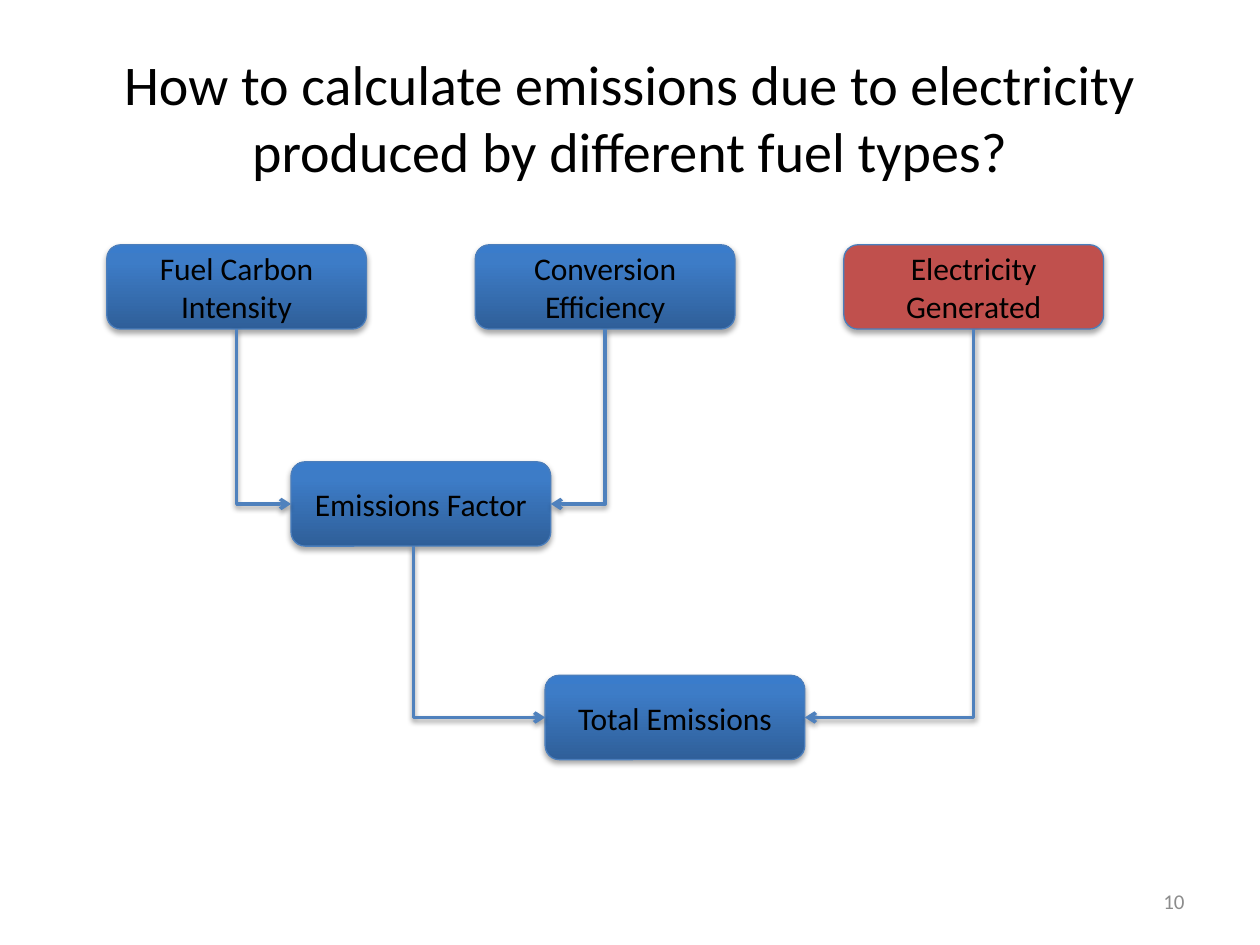
from copy import deepcopy
from lxml import etree
from pptx import Presentation
from pptx import util as u
from pptx.dml.color import RGBColor
from pptx.enum import shapes, text
from pptx.oxml import ns

Pt = u.Pt
BLACK = RGBColor(0, 0, 0)
GREY = RGBColor(0x8C, 0x8C, 0x8C)
RED = RGBColor(0xC0, 0x50, 0x4D)
EDGE = RGBColor(0x4B, 0x7E, 0xBC)
ARROW = RGBColor(0x4F, 0x81, 0xBD)
BLUES = ((0, RGBColor(0x2F, 0x5F, 0x99)),
         (80, RGBColor(0x3D, 0x7C, 0xC7)),
         (100, RGBColor(0x3A, 0x7C, 0xCB)))
WIDE, HIGH = 148.4, 48.2


def add(node, tag, **attrs):
    return etree.SubElement(node, ns.qn(tag), attrs)


def shade(list_, dist, alpha):
    drop = add(list_, "a:outerShdw", blurRad=str(Pt(3.15)), dist=str(Pt(dist)),
               dir="5400000", rotWithShape="0")
    add(add(drop, "a:srgbClr", val=str(BLACK)), "a:alpha", val=str(alpha * 1000))


def write(shape, words, size, align, color=BLACK):
    frame = shape.text_frame
    frame.text = words
    frame.word_wrap = True
    frame.vertical_anchor = text.MSO_ANCHOR.MIDDLE
    line = frame.paragraphs[0]
    line.alignment = align
    font = line.runs[0].font
    font.name, font.size, font.color.rgb = "Calibri", Pt(size), color


def label(slide, box, words, size, align, color=BLACK):
    shape = slide.shapes.add_textbox(*map(Pt, box))
    write(shape, words, size, align, color)


def blend(shape):
    shape.fill.gradient()
    shape.fill.gradient_angle = 90
    stops = shape._element.spPr.find(".//" + ns.qn("a:gsLst"))
    stops.append(deepcopy(stops[-1]))
    for stop, node, (place, color) in zip(shape.fill.gradient_stops, stops, BLUES):
        stop.color.rgb = color
        node.set("pos", str(place * 1000))


def node(slide, x, y, words, color=None):
    shape = slide.shapes.add_shape(shapes.MSO_SHAPE.ROUNDED_RECTANGLE,
                                   Pt(x), Pt(y), Pt(WIDE), Pt(HIGH))
    shape.shadow.inherit = False
    if color is None:
        blend(shape)
    else:
        shape.fill.solid()
        shape.fill.fore_color.rgb = color
    shape.line.color.rgb = EDGE
    shape.line.width = Pt(0.75)
    shade(shape._element.spPr.find(ns.qn("a:effectLst")), 1.8, 35)
    write(shape, words, 18, text.PP_ALIGN.CENTER)


def elbow(slide, x, y, end, base):
    mid, level = (x + end) / 2, (y + base) / 2
    long, side = (base - y) / 2, abs(end - x) / 2
    link = slide.shapes.add_connector(
        shapes.MSO_CONNECTOR.ELBOW, Pt(mid - long), Pt(level - side),
        Pt(mid + long), Pt(level + side))
    link.line.color.rgb = ARROW
    link.line.width = Pt(2)
    props = link._element.spPr
    props.find(ns.qn("a:prstGeom")).set("prst", "bentConnector2")
    turn = props.find(ns.qn("a:xfrm"))
    turn.set("rot", "16200000" if end > x else "5400000")
    if end > x:
        turn.set("flipH", "1")
    add(props.find(ns.qn("a:ln")), "a:tailEnd", type="arrow")
    shade(add(props, "a:effectLst"), 1.6, 38)


def chart(slide, x, y):
    step = 210.6
    factor = (x + step / 2, y + 124)
    total = (x + 250.5, y + 246)
    node(slide, *total, "Total Emissions")
    node(slide, *factor, "Emissions Factor")
    tops = (("Fuel Carbon Intensity", None), ("Conversion Efficiency", None),
            ("Electricity Generated", RED))
    for i, (words, color) in enumerate(tops):
        node(slide, x + i * step, y, words, color)
    fuel, ratio, power = (x + i * step + WIDE / 2 for i in range(3))
    for start, top, goal, edge in (
            (fuel, y, factor, 0), (factor[0] + 70, factor[1], total, 0),
            (power, y, total, WIDE), (ratio, y, factor, WIDE)):
        elbow(slide, start, top + HIGH, goal[0] + edge, goal[1] + HIGH / 2)


def main():
    deck = Presentation()
    deck.slide_width, deck.slide_height = Pt(720), Pt(540)
    slide = deck.slides.add_slide(deck.slide_layouts[6])
    label(slide, (36, 21.6, 648, 90),
          "How to calculate emissions due to electricity produced by different fuel types?",
          32, text.PP_ALIGN.CENTER)
    label(slide, (516, 500.5, 168, 28.8), "10", 12, text.PP_ALIGN.RIGHT, GREY)
    chart(slide, 61, 139.9)
    deck.save("out.pptx")


if __name__ == "__main__":
    main()
